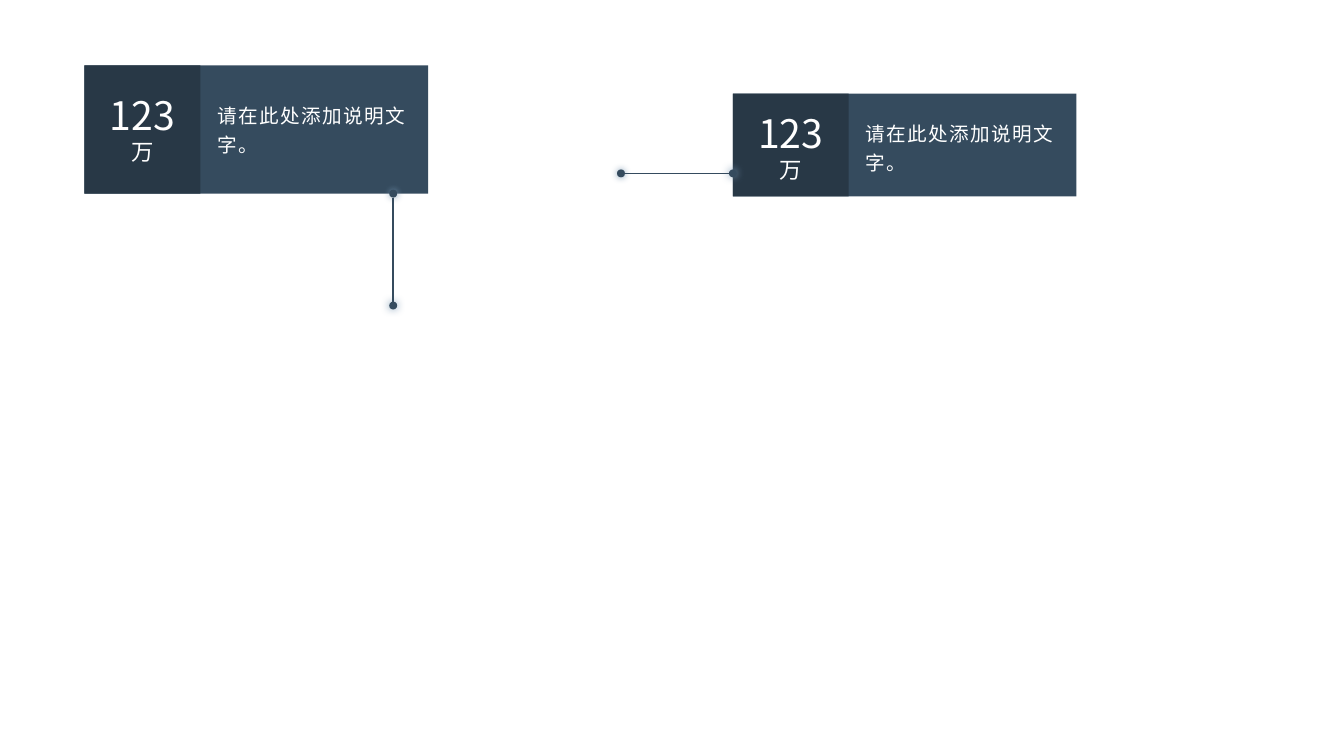
from lxml import etree
from pptx import Presentation
from pptx.dml.color import RGBColor
from pptx.enum.shapes import MSO_CONNECTOR as Connector, MSO_SHAPE as Shape
from pptx.enum.text import MSO_ANCHOR as Anchor, PP_ALIGN as Align
from pptx.oxml.ns import qn
from pptx.util import Cm, Pt

FONT = "Noto Sans CJK SC"
PANEL, BADGE, WHITE, GLOW = "354B5E", "283846", "FFFFFF", "7494B0"
CARD_WIDTH, BADGE_WIDTH, NODE_SIZE = 8.66, 2.92, 0.2


def color(hex_code):
    return RGBColor.from_string(hex_code)


def add_filled(group, kind, left, top, width, height, fill):
    shape = group.shapes.add_shape(kind, Cm(left), Cm(top), Cm(width), Cm(height))
    shape.shadow.inherit = False
    shape.fill.solid()
    shape.fill.fore_color.rgb = color(fill)
    shape.line.fill.background()
    return shape


def add_text(group, left, top, width, height, text, sizes):
    box = group.shapes.add_textbox(Cm(left), Cm(top), Cm(width), Cm(height))
    frame = box.text_frame
    frame.word_wrap = True
    frame.vertical_anchor = Anchor.MIDDLE
    paragraph = frame.paragraphs[0]
    paragraph.text = text
    for run, size in zip(paragraph.runs, sizes):
        run.font.size = Pt(size)
        run.font.name = FONT
        run.font.color.rgb = color(WHITE)
        east_asian = etree.SubElement(run.font._element, qn("a:ea"))
        east_asian.set("typeface", FONT)
    return paragraph


def add_card(group, left, top, height, text_height):
    # Panel with a darker badge at its left end
    add_filled(group, Shape.RECTANGLE, left, top, CARD_WIDTH, height, PANEL)
    add_filled(group, Shape.RECTANGLE, left, top, BADGE_WIDTH, height, BADGE)

    # Figure with its unit below
    text_top = top + 0.26
    figure = add_text(group, left, text_top, BADGE_WIDTH, text_height,
                      "123\v万", (28, 16))
    figure.alignment = Align.CENTER

    # Description
    description = add_text(group, left + 3.1, text_top, 5.36, text_height,
                           "请在此处添加说明文字。", (14,))
    description.line_spacing = 1.2
    for run in description.runs:
        run.font._element.set("spc", "100")


def add_node(group, x, y, blur):
    node = add_filled(group, Shape.OVAL, x - NODE_SIZE / 2, y - NODE_SIZE / 2,
                      NODE_SIZE, NODE_SIZE, PANEL)
    effects = node._element.spPr.find(qn("a:effectLst"))
    shadow = etree.SubElement(effects, qn("a:outerShdw"), blurRad=str(Pt(blur)),
                              dist="0", dir="0", algn="ctr", rotWithShape="0")
    tint = etree.SubElement(shadow, qn("a:srgbClr"), val=GLOW)
    etree.SubElement(tint, qn("a:alpha"), val="90000")


def add_pointer(group, x, y, across, down):
    # Glowing end nodes
    end_x, end_y = x + across, y + down
    add_node(group, x, y, 5)
    add_node(group, end_x, end_y, 6)

    # Line between the facing edges of the nodes
    gap = NODE_SIZE / 2 / max(across, down)
    line = group.shapes.add_connector(
        Connector.STRAIGHT,
        Cm(x + across * gap), Cm(y + down * gap),
        Cm(end_x - across * gap), Cm(end_y - down * gap))
    line.line.color.rgb = color(PANEL)
    line.line.width = Pt(1.25)
    etree.SubElement(line._element.spPr, qn("a:effectLst"))


def add_callout_below(slide, left, top, height, text_height, reach):
    group = slide.shapes.add_group_shape()
    add_card(group, left, top, height, text_height)
    add_pointer(group, left + 7.78, top + height, 0, reach)


def add_callout_left(slide, left, top, height, text_height, reach):
    group = slide.shapes.add_group_shape()
    add_card(group, left, top, height, text_height)
    add_pointer(group, left - reach, top + 2.01, reach, 0)


def main():
    presentation = Presentation()
    presentation.slide_width = Cm(33.87)
    presentation.slide_height = Cm(19.05)
    slide = presentation.slides.add_slide(presentation.slide_layouts[6])
    add_callout_below(slide, 2.13, 1.65, 3.23, 2.62, reach=2.82)
    add_callout_left(slide, 18.47, 2.36, 2.59, 2.11, reach=2.82)
    presentation.save("out.pptx")


if __name__ == "__main__":
    main()
